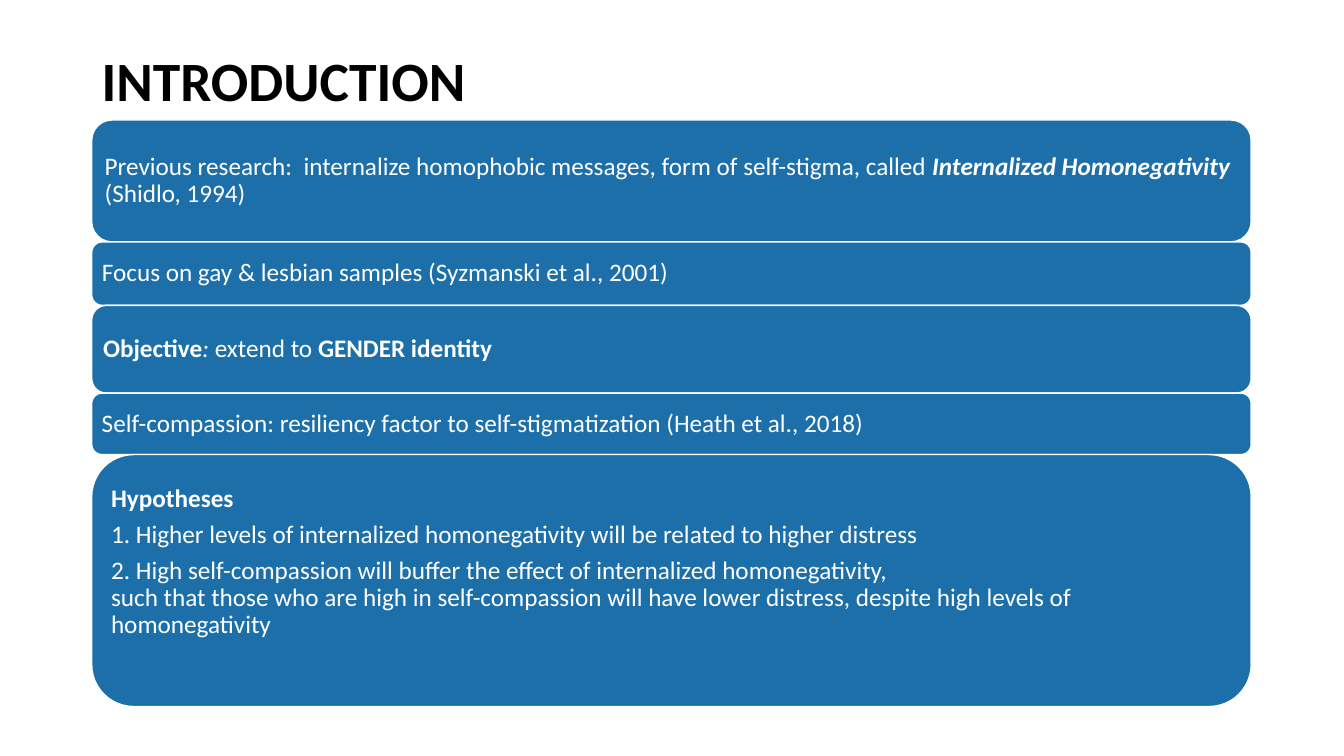
from pptx import Presentation
from pptx.dml.color import RGBColor
from pptx.enum.shapes import MSO_SHAPE
from pptx.enum.text import MSO_ANCHOR, PP_ALIGN
from pptx.util import Inches, Pt

ROUNDED = MSO_SHAPE.ROUNDED_RECTANGLE
MIDDLE = MSO_ANCHOR.MIDDLE
LEFT_ALIGNED = PP_ALIGN.LEFT

COLORS = {"title": "000000", "panel": "1D6FA9", "light": "FFFFFF"}
LEFT, TOP, WIDTH = 0.91, 1.19, 11.5
PLAIN, BOLD, ITALIC, BOLD_ITALIC = "", "b", "i", "bi"

PANELS = [
    (1.21, 0.07, [[
        ("Previous research:  internalize homophobic messages, form of self-stigma, called ", PLAIN),
        ("Internalized Homonegativity ", BOLD_ITALIC),
        ("(Shidlo, 1994)", PLAIN),
    ]]),
    (0.63, 0.07, [[("Focus on gay & lesbian samples (Syzmanski et al., 2001)", PLAIN)]]),
    (0.87, 0.07, [[
        ("Objective", BOLD),
        (": ", ITALIC),
        ("extend to ", PLAIN),
        ("GENDER identity", BOLD),
    ]]),
    (0.61, 0.07, [[
        ("Self-compassion: resiliency factor to self-stigmatization (Heath et al., 2018)", PLAIN),
    ]]),
    (2.5, 0.43, [
        [("Hypotheses", BOLD)],
        [("1. Higher levels of internalized homonegativity will be related to higher distress", PLAIN)],
        [("2. High self-compassion will buffer the effect of internalized homonegativity,\n"
          "such that those who are high in self-compassion will have lower distress, "
          "despite high levels of homonegativity", PLAIN)],
    ]),
]


class SlideBuilder:
    font = "Calibri"
    line_spacing = 0.9

    def __init__(self, slide):
        self.slide = slide

    def fill_text(self, frame, paragraphs, size, color, space_after=0):
        frame.word_wrap = True
        frame.vertical_anchor = MIDDLE
        for index, runs in enumerate(paragraphs):
            paragraph = frame.add_paragraph() if index else frame.paragraphs[0]
            paragraph.alignment = LEFT_ALIGNED
            paragraph.line_spacing = self.line_spacing
            paragraph.space_after = Pt(space_after)
            for text, style in runs:
                for position, line in enumerate(text.split("\n")):
                    if position:
                        paragraph.add_line_break()
                    run = paragraph.add_run()
                    run.text = line
                    run.font.name = self.font
                    run.font.size = Pt(size)
                    run.font.bold = "b" in style
                    run.font.italic = "i" in style
                    run.font.color.rgb = RGBColor.from_string(COLORS[color])

    def title(self, text, top, height):
        box = self.slide.shapes.add_textbox(
            Inches(LEFT), Inches(top), Inches(WIDTH), Inches(height))
        self.fill_text(box.text_frame, [[(text, BOLD)]], 39.6, "title")

    def panel(self, top, height, bottom_inset, paragraphs):
        shape = self.slide.shapes.add_shape(
            ROUNDED, Inches(LEFT), Inches(top), Inches(WIDTH), Inches(height))
        shape.shadow.inherit = False
        shape.fill.solid()
        shape.fill.fore_color.rgb = RGBColor.from_string(COLORS["panel"])
        shape.line.color.rgb = RGBColor.from_string(COLORS["light"])
        shape.line.width = Pt(1)
        frame = shape.text_frame
        frame.margin_left = frame.margin_right = frame.margin_top = Inches(0.07)
        frame.margin_bottom = Inches(bottom_inset)
        self.fill_text(frame, paragraphs, 18, "light", space_after=6.3)


def main():
    presentation = Presentation()
    presentation.slide_width = Inches(13.33)
    presentation.slide_height = Inches(7.5)
    slide = presentation.slides.add_slide(presentation.slide_layouts[6])
    builder = SlideBuilder(slide)
    builder.title("INTRODUCTION", 0.47, 0.72)
    top = TOP
    for height, bottom_inset, paragraphs in PANELS:
        builder.panel(top, height, bottom_inset, paragraphs)
        top += height
    presentation.save("out.pptx")


if __name__ == "__main__":
    main()
